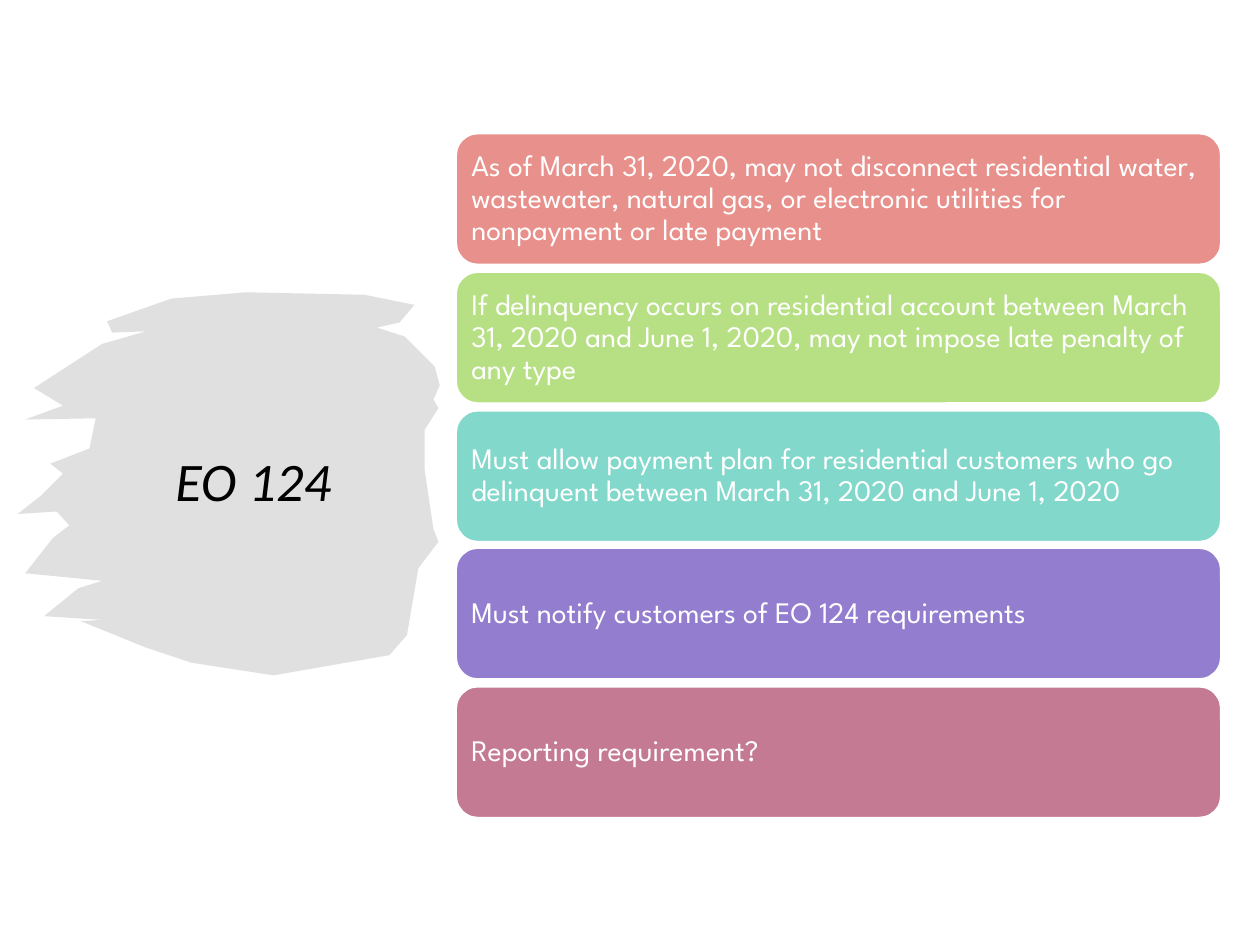
from dataclasses import dataclass

from lxml import etree
from pptx import Presentation
from pptx.dml.color import RGBColor
from pptx.enum.shapes import MSO_SHAPE
from pptx.enum.text import MSO_ANCHOR, PP_ALIGN
from pptx.oxml.ns import qn
from pptx.util import Emu, Pt

ROUND_RECT = MSO_SHAPE.ROUNDED_RECTANGLE
MIDDLE = MSO_ANCHOR.MIDDLE
LEFT, CENTER = PP_ALIGN.LEFT, PP_ALIGN.CENTER

EMU_PER_PX = 9144  # 100 px to the inch
BOX_LEFT, BOX_WIDTH, BOX_HEIGHT = 362, 607, 104
FIRST_TOP, LAST_TOP = 106, 545
BOX_INSET = 7


@dataclass
class Requirement:
    text: str
    fill: str


REQUIREMENTS = [
    Requirement("As of March 31, 2020, may not disconnect residential water, "
                "wastewater, natural gas, or electronic utilities for "
                "nonpayment or late payment", "E8908B"),
    Requirement("If delinquency occurs on residential account between March "
                "31, 2020 and June 1, 2020, may not impose late penalty of "
                "any type", "B7E085"),
    Requirement("Must allow payment plan for residential customers who go "
                "delinquent between March 31, 2020 and June 1, 2020", "81D8CB"),
    Requirement("Must notify customers of EO 124 requirements", "927DCE"),
    Requirement("Reporting requirement?", "C47A93"),
]

# Outline of the brush stroke, clockwise from the top
BRUSH = [
    (195, 232), (289, 234), (329, 242), (317, 256), (299, 260),
    (321, 267), (345, 291), (349, 306), (344, 317), (348, 324),
    (337, 341), (337, 373), (344, 420), (348, 430), (332, 451),
    (323, 504), (309, 520), (217, 536), (152, 526), (116, 514),
    (64, 493), (81, 492), (35, 489), (62, 467), (81, 461),
    (20, 455), (42, 427), (55, 417), (45, 406), (14, 408),
    (33, 393), (50, 376), (40, 368), (71, 356), (76, 332),
    (20, 333), (50, 322), (27, 308), (81, 273), (116, 263),
    (89, 264), (85, 255), (136, 237),
]


def px(n: int) -> Emu:
    return Emu(n * EMU_PER_PX)


def color(hex_rgb: str) -> RGBColor:
    return RGBColor.from_string(hex_rgb)


def set_text(sp, text: str, font: str, size: int, hex_rgb: str, align, italic: bool = False):
    tf = sp.text_frame
    tf.word_wrap = True
    tf.vertical_anchor = MIDDLE
    tf.text = text
    p = tf.paragraphs[0]
    p.alignment = align
    p.line_spacing = 0.9
    f = p.runs[0].font
    f.name, f.size, f.italic = font, Pt(size), italic
    f.color.rgb = color(hex_rgb)
    return tf


def draw_brush(s, points: list[tuple[int, int]], fill: str, opacity: int) -> None:
    builder = s.shapes.build_freeform(*points[0], scale=EMU_PER_PX)
    builder.add_line_segments(points[1:], close=True)
    sp = builder.convert_to_shape()
    sp.shadow.inherit = False
    sp.fill.solid()
    sp.fill.fore_color.rgb = color(fill)
    sp.line.fill.background()
    clr = next(sp.element.iter(qn("a:srgbClr")))
    etree.SubElement(clr, qn("a:alpha")).set("val", str(opacity * 1000))


def draw_requirement(s, item: Requirement, top: int) -> None:
    sp = s.shapes.add_shape(ROUND_RECT, px(BOX_LEFT), px(top), px(BOX_WIDTH), px(BOX_HEIGHT))
    sp.shadow.inherit = False
    sp.fill.solid()
    sp.fill.fore_color.rgb = color(item.fill)
    sp.line.color.rgb = color("FFFFFF")
    sp.line.width = Pt(1)
    tf = set_text(sp, item.text, "League Spartan", 17, "FFFFFF", LEFT)
    tf.margin_left = tf.margin_right = tf.margin_top = tf.margin_bottom = px(BOX_INSET)


def main() -> None:
    prs = Presentation()
    prs.slide_width, prs.slide_height = px(1000), px(750)
    s = prs.slides.add_slide(prs.slide_layouts[6])

    # Title on a brush stroke
    draw_brush(s, BRUSH, "D9D9D9", 80)
    title = s.shapes.add_textbox(px(69), px(164), px(264), px(440))
    set_text(title, "EO 124", "Calibri", 31, "000000", CENTER, italic=True)

    # Evenly spaced requirements
    pitch = (LAST_TOP - FIRST_TOP) / (len(REQUIREMENTS) - 1)
    for i, item in enumerate(REQUIREMENTS):
        draw_requirement(s, item, round(FIRST_TOP + i * pitch))

    prs.save("out.pptx")


if __name__ == "__main__":
    main()
